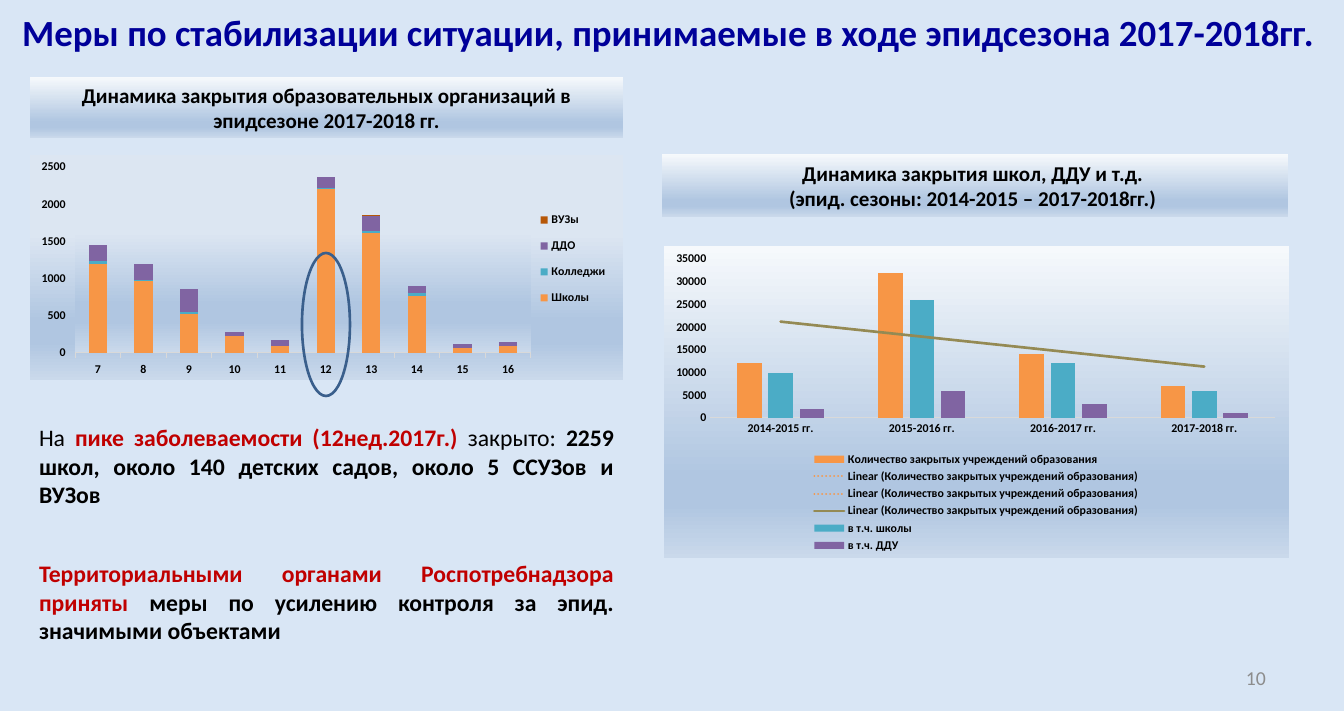
from lxml import etree
from pptx import Presentation
from pptx import util as u
from pptx.chart import data as chart_data
from pptx.dml.color import RGBColor
from pptx.enum import chart as ch, shapes, text
from pptx.oxml import ns, parse_xml

PX = 9646  # EMU in one px
FONT = "Calibri"
BLACK, RED, NAVY, GREY = "000000", "C00000", "000099", "8C8C8C"
ORANGE, TEAL, PURPLE, BROWN, OLIVE = "F79646", "4BACC6", "8064A2", "B65708", "948A54"
BLUE_BAND = [(74, "B0C6E1"), (83, "B0C6E1"), (100, "CAD9EB")]
PANEL = [(0, "F6F9FC")] + BLUE_BAND
SOFT_PANEL = [(35, "DCE6F2")] + BLUE_BAND
LEFT, CENTER, RIGHT = text.PP_ALIGN.JUSTIFY, text.PP_ALIGN.CENTER, text.PP_ALIGN.RIGHT


def px(*lengths):
    return [n * PX for n in lengths]


def color(hex_code):
    return RGBColor.from_string(hex_code)


def xml(tag, inner):
    return parse_xml(f'<{tag} {ns.nsdecls("a", "c")}>{inner}</{tag}>')


def gradient(stops):
    marks = "".join(f'<a:gs pos="{at * 1000}"><a:srgbClr val="{c}"/></a:gs>'
                    for at, c in stops)
    return f'<a:gsLst>{marks}</a:gsLst><a:lin ang="5400000" scaled="0"/>'


def chart_fill(stops):
    return xml("c:spPr", f"<a:gradFill>{gradient(stops)}</a:gradFill><a:ln><a:noFill/></a:ln>")


def style_font(font, size, hex_code, bold):
    font.name, font.size, font.bold = FONT, u.Pt(size), bold
    font.color.rgb = color(hex_code)


def write(shape, paragraphs, size, align, anchor=text.MSO_ANCHOR.MIDDLE, inset=(11, 6)):
    """Each paragraph is a list of (words, colour, bold) runs."""
    frame = shape.text_frame
    frame.word_wrap, frame.vertical_anchor = True, anchor
    frame.margin_left = frame.margin_right = inset[0] * PX
    frame.margin_top = frame.margin_bottom = inset[1] * PX
    for i, runs in enumerate(paragraphs):
        paragraph = frame.add_paragraph() if i else frame.paragraphs[0]
        paragraph.alignment = align
        for words, hex_code, bold in runs:
            run = paragraph.add_run()
            run.text = words
            style_font(run.font, size, hex_code, bold)


def add_label(slide, box, paragraphs, size, align, **options):
    write(slide.shapes.add_textbox(*px(*box)), paragraphs, size, align, **options)


def add_banner(slide, box, lines):
    banner = slide.shapes.add_shape(shapes.MSO_SHAPE.RECTANGLE, *px(*box))
    banner.shadow.inherit = False
    banner.line.fill.background()
    banner.fill.background()
    no_fill = banner._element.spPr.find(ns.qn("a:noFill"))
    no_fill.addprevious(xml("a:gradFill", gradient(PANEL)))
    banner._element.spPr.remove(no_fill)
    write(banner, [[(line, BLACK, True)] for line in lines], 16, CENTER, inset=(9, 5))


def place_in_chart(box, area, inner=False):
    """Layout of an area, given in px from the chart's corner."""
    x, y, w, h = area
    target = '<c:layoutTarget val="inner"/>' if inner else ""
    shares = zip("xywh", (x / box[2], y / box[3], w / box[2], h / box[3]))
    places = "".join(f'<c:{k} val="{v:.4f}"/>' for k, v in shares)
    return xml("c:layout", f'<c:manualLayout>{target}<c:xMode val="edge"/>'
                           f'<c:yMode val="edge"/>{places}</c:manualLayout>')


def add_columns(slide, box, kind, categories, series, gap, overlap, top, step, tick,
                panel, plot_box, legend_box, legend_side):
    figures = chart_data.CategoryChartData()
    figures.categories = categories
    for name, _, values in series:
        figures.add_series(name, values)
    chart = slide.shapes.add_chart(kind, *px(*box), figures).chart
    chart.has_title = False
    style_font(chart.font, 10, BLACK, False)

    # Columns
    plot = chart.plots[0]
    plot.gap_width, plot.overlap, plot.vary_by_categories = gap, overlap, False
    for columns, (_, hex_code, _) in zip(plot.series, series):
        columns.format.fill.solid()
        columns.format.fill.fore_color.rgb = color(hex_code)
        columns.invert_if_negative = False

    # Axes
    for axis in (chart.category_axis, chart.value_axis):
        axis.has_major_gridlines = False
        axis.major_tick_mark, axis.minor_tick_mark = tick, ch.XL_TICK_MARK.NONE
        style_font(axis.tick_labels.font, 9, BLACK, True)
    chart.category_axis.format.line.color.rgb = color("D9D9D9")
    chart.category_axis.format.line.width = u.Pt(0.75)
    amounts = chart.value_axis
    amounts.format.line.fill.background()
    amounts.minimum_scale, amounts.maximum_scale, amounts.major_unit = 0, top, step
    amounts.tick_labels.number_format = "0"
    amounts.tick_labels.number_format_is_linked = False

    # Legend
    chart.has_legend = True
    legend = chart.legend
    legend.position, legend.include_in_layout = legend_side, False
    style_font(legend.font, 9, BLACK, True)
    for old in legend._element.findall(ns.qn("c:layout")):
        legend._element.remove(old)
    legend._element.find(ns.qn("c:legendPos")).addnext(place_in_chart(box, legend_box))

    # Plot area and panel
    root = chart._chartSpace
    area = root.find(".//" + ns.qn("c:plotArea"))
    for old in area.findall(ns.qn("c:layout")):
        area.remove(old)
    area.insert(0, place_in_chart(box, plot_box, inner=True))
    root.find(ns.qn("c:chart")).addnext(chart_fill(panel))
    return chart


def add_trend(columns, hex_code, width, dash):
    line = (f'<c:spPr><a:ln w="{u.Pt(width)}" cap="rnd"><a:solidFill><a:srgbClr val="{hex_code}"/>'
            f'</a:solidFill><a:prstDash val="{dash}"/></a:ln></c:spPr>')
    trend = xml("c:trendline", line + '<c:trendlineType val="linear"/>'
                '<c:dispRSqr val="0"/><c:dispEq val="0"/>')
    columns._element.find(ns.qn("c:cat")).addprevious(trend)


def weekly_closures(slide, x, y, width):
    add_banner(slide, (x, y, width, 61),
               ["Динамика закрытия образовательных организаций в эпидсезоне 2017-2018 гг."])
    series = [
        ("Школы", ORANGE, (1190, 960, 520, 220, 90, 2210, 1610, 770, 60, 90)),
        ("Колледжи", TEAL, (50, 20, 30, 0, 0, 10, 30, 30, 0, 0)),
        ("ДДО", PURPLE, (210, 220, 310, 60, 80, 140, 200, 100, 60, 50)),
        ("ВУЗы", BROWN, (0, 0, 0, 0, 0, 0, 10, 0, 0, 0)),
    ]
    chart = add_columns(slide, (x, y + 78, width, 225), ch.XL_CHART_TYPE.COLUMN_STACKED,
                        [str(week) for week in range(7, 17)], series, 150, 100, 2500, 500,
                        ch.XL_TICK_MARK.OUTSIDE, SOFT_PANEL, (45, 12, 456, 186),
                        (500, 46, 86, 116), ch.XL_LEGEND_POSITION.RIGHT)
    chart._chartSpace.find(".//" + ns.qn("c:plotArea")).append(chart_fill(SOFT_PANEL))

    # Ring around the peak week
    peak = slide.shapes.add_shape(shapes.MSO_SHAPE.OVAL, *px(x + 272, y + 176, 48, 143))
    peak.shadow.inherit = False
    peak.fill.background()
    peak.line.color.rgb, peak.line.width = color("3A5F8C"), u.Pt(2)


def measures(slide, x, y, width):
    notes = [
        [("На ", BLACK, False), ("пике заболеваемости (12нед.2017г.) ", RED, True),
         ("закрыто: ", BLACK, False),
         ("2259 школ, около 140 детских садов, около 5 ССУЗов и ВУЗов", BLACK, True)],
        [("Территориальными органами Роспотребнадзора приняты ", RED, True),
         ("меры по усилению контроля за эпид. значимыми объектами", BLACK, True)],
    ]
    for i, runs in enumerate(notes):
        add_label(slide, (x, y + 136 * i, width, 96), [runs], 18, LEFT,
                  anchor=text.MSO_ANCHOR.TOP, inset=(9, 5))


def season_closures(slide, x, y, width):
    add_banner(slide, (x, y, width, 63), ["Динамика закрытия школ, ДДУ и т.д. ",
                                          "(эпид. сезоны: 2014-2015 – 2017-2018гг.) "])
    series = [
        ("Количество закрытых учреждений образования", ORANGE, (12000, 32000, 14000, 7000)),
        ("в т.ч. школы", TEAL, (10000, 26000, 12000, 6000)),
        ("в т.ч. ДДУ", PURPLE, (2000, 6000, 3000, 1000)),
    ]
    seasons = [f"{year}-{year + 1} гг." for year in range(2014, 2018)]
    chart = add_columns(slide, (x + 2, y + 92, width - 1, 312),
                        ch.XL_CHART_TYPE.COLUMN_CLUSTERED, seasons, series, 219, -27,
                        35000, 5000, ch.XL_TICK_MARK.NONE, PANEL, (46, 13, 565, 159),
                        (146, 203, 332, 107), ch.XL_LEGEND_POSITION.BOTTOM)
    for trend in [(ORANGE, 1.5, "sysDot")] * 2 + [(OLIVE, 2, "solid")]:
        add_trend(chart.plots[0].series[0], *trend)


def main():
    deck = Presentation()
    deck.slide_width, deck.slide_height = px(1344, 711)
    slide = deck.slides.add_slide(deck.slide_layouts[6])
    slide.background.fill.solid()
    slide.background.fill.fore_color.rgb = color("D9E6F5")

    title = "Меры по стабилизации ситуации, принимаемые в ходе эпидсезона 2017-2018гг. "
    add_label(slide, (0, 0, 1344, 63), [[(title, NAVY, True)]], 28, CENTER)
    weekly_closures(slide, 30, 77, 593)
    measures(slide, 30, 418, 593)
    season_closures(slide, 662, 154, 626)
    add_label(slide, (963, 659, 314, 38), [[("10", GREY, False)]], 15, RIGHT)
    deck.save("out.pptx")


if __name__ == "__main__":
    main()
